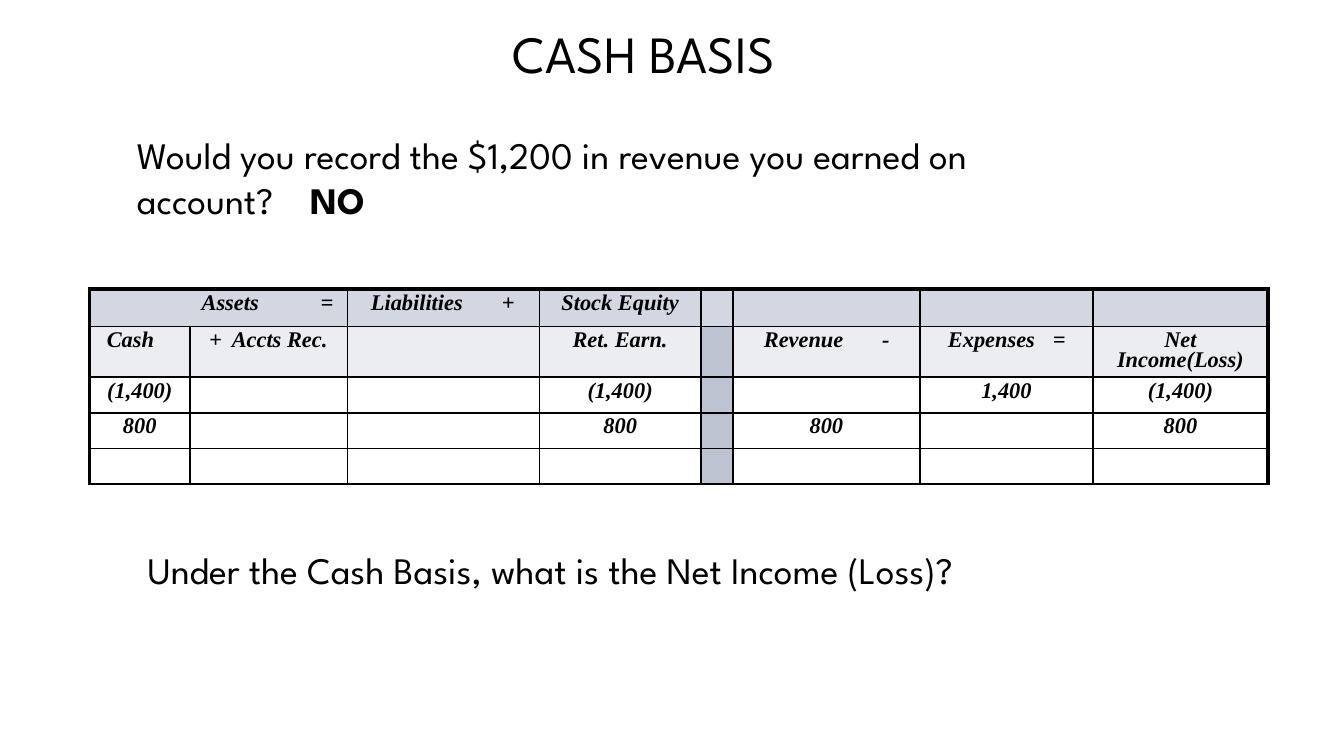
from pptx import Presentation
from pptx.dml.color import RGBColor as RGB
from pptx.enum.text import MSO_ANCHOR as Anchor, PP_ALIGN as Align
from pptx.oxml.xmlchemy import OxmlElement as Element
from pptx.util import Pt

PX = 4572  # 200 px to the inch
COLORS = {"ink": "000000", "top": "D3D7E1", "labels": "EBEDF1", "divider": "BEC3D2"}
BODY_FONT, TABLE_FONT = "League Spartan", "Times New Roman"
THIN, THICK = 1, 2.25

COLUMNS = [150, 234, 286, 240, 46, 278, 258, 260]
ROWS = [56, 56, 50, 50, 50]
DIVIDER = 4
LEDGER = [
    ["\tAssets\t=", "", "\tLiabilities\t+", "Stock Equity", "", "", "", ""],
    ["\tCash", "\t+\tAccts Rec.", "", "Ret. Earn.", "",
     "\tRevenue\t-", "\tExpenses\t=", "Net Income(Loss)"],
    ["(1,400)", "", "", "(1,400)", "", "", "1,400", "(1,400)"],
    ["800", "", "", "800", "", "800", "", "800"],
    [""] * 8,
]
# Tab stops that set account names and operators apart
TABS = {
    (0, 0): [147, 324], (0, 2): [15, 210],
    (1, 0): [6], (1, 1): [8, 42], (1, 5): [26, 202], (1, 6): [22, 178],
}


def add_tabs(paragraph, stops):
    tab_list = Element("a:tabLst")
    for stop in stops:
        tab = Element("a:tab")
        tab.set("pos", str(stop * PX))
        tab.set("algn", "l")
        tab_list.append(tab)
    paragraph._p.get_or_add_pPr().append(tab_list)


def style(run, font, size, bold=False, italic=False):
    run.font.name, run.font.size = font, Pt(size)
    run.font.bold, run.font.italic = bold, italic
    run.font.color.rgb = RGB.from_string(COLORS["ink"])


def add_borders(cell, widths):
    properties = cell._tc.get_or_add_tcPr()
    for index, (side, width) in enumerate(widths.items()):
        line = Element(f"a:ln{side}")
        line.set("w", str(Pt(width)))
        fill, color = Element("a:solidFill"), Element("a:srgbClr")
        color.set("val", COLORS["ink"])
        fill.append(color)
        line.append(fill)
        properties.insert(index, line)


def fill_cell(cell, row, column):
    shade = {0: "top", 1: "labels"}.get(row)
    if column == DIVIDER and row > 0:
        shade = "divider"
    if shade:
        cell.fill.solid()
        cell.fill.fore_color.rgb = RGB.from_string(COLORS[shade])
    else:
        cell.fill.background()


def set_empty_size(paragraph):
    """Keeps a row of empty cells as low as a row of text."""
    end, font = Element("a:endParaRPr"), Element("a:latin")
    end.set("sz", "1200")
    font.set("typeface", TABLE_FONT)
    end.append(font)
    paragraph._p.append(end)


def write_cell(cell, text, stops):
    cell.margin_left = cell.margin_right = 20 * PX
    cell.margin_top = cell.margin_bottom = 8 * PX
    cell.text_frame.text = text
    paragraph = cell.text_frame.paragraphs[0]
    paragraph.line_spacing = 0.8
    paragraph.alignment = Align.LEFT if stops else Align.CENTER
    if stops:
        add_tabs(paragraph, stops)
    for run in paragraph.runs:
        style(run, TABLE_FONT, 12, bold=True, italic=True)
    if not text:
        set_empty_size(paragraph)


def add_ledger(slide, left, top):
    table = slide.shapes.add_table(
        len(ROWS), len(COLUMNS), left * PX, top * PX,
        sum(COLUMNS) * PX, sum(ROWS) * PX).table
    table.first_row = table.horz_banding = False
    for column, width in zip(table.columns, COLUMNS):
        column.width = width * PX
    for row, height in zip(table.rows, ROWS):
        row.height = height * PX
    table.cell(0, 0).merge(table.cell(0, 1))

    last = len(COLUMNS) - 1
    for r, texts in enumerate(LEDGER):
        for c, text in enumerate(texts):
            cell = table.cell(r, c)
            write_cell(cell, text, TABS.get((r, c)))
            fill_cell(cell, r, c)
            add_borders(cell, {
                "L": THICK if c == 0 else THIN,
                "R": THICK if c == last else THIN,
                "T": THICK if r == 0 else THIN,
                "B": THIN,
            })


def add_text(slide, box, parts, size, align=Align.LEFT, anchor=Anchor.MIDDLE, stops=()):
    """Each part is a text and whether it is bold."""
    frame = slide.shapes.add_textbox(*(side * PX for side in box)).text_frame
    frame.word_wrap = True
    frame.vertical_anchor = anchor
    paragraph = frame.paragraphs[0]
    paragraph.alignment = align
    if stops:
        add_tabs(paragraph, stops)
    for text, bold in parts:
        run = paragraph.add_run()
        run.text = text
        style(run, BODY_FONT, size, bold)


def build_cash_basis(slide):
    add_ledger(slide, 133, 430)
    # Title
    add_text(slide, (558, 22, 800, 114), [("CASH BASIS", False)], 28,
             Align.CENTER, Anchor.TOP)
    # Question with its answer
    question = "Would you record the $1,200 in revenue you earned on account?\t"
    add_text(slide, (184, 196, 1450, 134), [(question, False), ("NO", True)], 20,
             stops=[259])
    # Closing question
    add_text(slide, (200, 780, 1450, 134),
             [("Under the Cash Basis, what is the Net Income (Loss)?", False)], 20)


def main():
    deck = Presentation()
    deck.slide_width, deck.slide_height = 2000 * PX, 1125 * PX
    build_cash_basis(deck.slides.add_slide(deck.slide_layouts[6]))
    deck.save("out.pptx")


if __name__ == "__main__":
    main()
